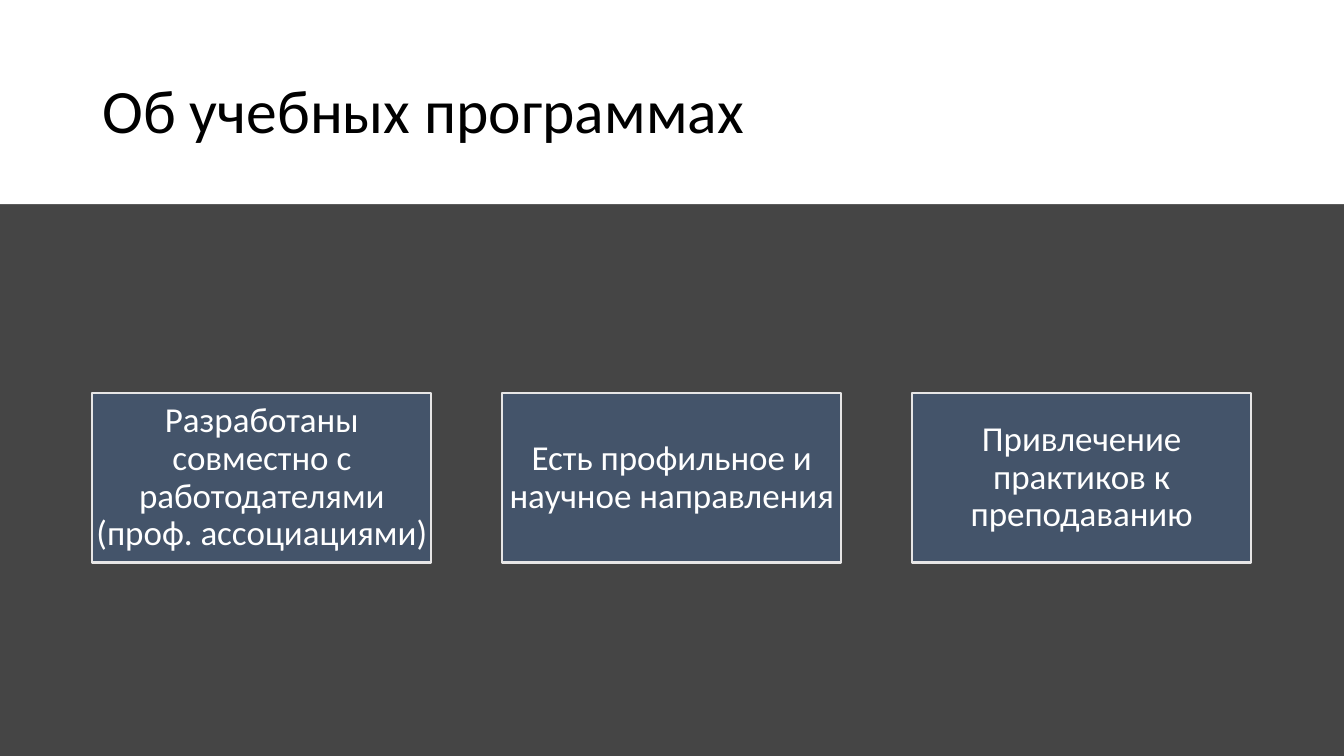
from dataclasses import dataclass

from pptx import Presentation
from pptx.dml.color import RGBColor
from pptx.enum.shapes import MSO_SHAPE
from pptx.enum.text import MSO_ANCHOR, MSO_AUTO_SIZE, PP_ALIGN
from pptx.shapes.autoshape import Shape
from pptx.slide import Slide
from pptx.util import Pt

COLOURS = {
    "background": "454545",
    "band": "FFFFFF",
    "title": "000000",
    "card": "44546A",
    "outline": "E7E6E6",
    "card_text": "FFFFFF",
}
FONT = "Calibri"
PAGE_WIDTH, PAGE_HEIGHT = 960, 540
CARD_LEFT, CARD_TOP, CARD_PITCH = 66, 280.8, 292.8
CARD_WIDTH, CARD_HEIGHT = 242, 121
CARD_TEXTS = (
    "Разработаны совместно с работодателями (проф. ассоциациями)",
    "Есть профильное и научное направления",
    "Привлечение практиков к преподаванию",
)


@dataclass(frozen=True)
class Frame:
    left: float
    top: float
    width: float
    height: float


@dataclass(frozen=True)
class TextStyle:
    size: float
    colour: str
    align: PP_ALIGN
    inset_x: float
    inset_y: float


TITLE_STYLE = TextStyle(44, "title", PP_ALIGN.LEFT, 7.2, 3.6)
CARD_STYLE = TextStyle(25, "card_text", PP_ALIGN.CENTER, 1.25, 1.25)


def colour(name: str) -> RGBColor:
    return RGBColor.from_string(COLOURS[name])


def add_rectangle(page: Slide, frame: Frame, fill: str) -> Shape:
    box = page.shapes.add_shape(
        MSO_SHAPE.RECTANGLE,
        Pt(frame.left), Pt(frame.top), Pt(frame.width), Pt(frame.height),
    )
    box.shadow.inherit = False
    box.fill.solid()
    box.fill.fore_color.rgb = colour(fill)
    box.line.fill.background()
    return box


def write_text(box: Shape, text: str, style: TextStyle) -> None:
    body = box.text_frame
    body.word_wrap = True
    body.auto_size = MSO_AUTO_SIZE.NONE
    body.vertical_anchor = MSO_ANCHOR.MIDDLE
    body.margin_left = body.margin_right = Pt(style.inset_x)
    body.margin_top = body.margin_bottom = Pt(style.inset_y)
    para = body.paragraphs[0]
    para.alignment = style.align
    para.line_spacing = 0.9
    span = para.add_run()
    span.text = text
    span.font.name = FONT
    span.font.size = Pt(style.size)
    span.font.color.rgb = colour(style.colour)


def add_title(page: Slide, text: str, frame: Frame) -> None:
    title = page.shapes.title
    title.left, title.top = Pt(frame.left), Pt(frame.top)
    title.width, title.height = Pt(frame.width), Pt(frame.height)
    write_text(title, text, TITLE_STYLE)
    page.shapes._spTree.append(title._element)


def add_card(page: Slide, index: int, text: str) -> None:
    left = CARD_LEFT + index * CARD_PITCH
    card = add_rectangle(page, Frame(left, CARD_TOP, CARD_WIDTH, CARD_HEIGHT), "card")
    card.line.color.rgb = colour("outline")
    card.line.width = Pt(1.5)
    write_text(card, text, CARD_STYLE)


def main() -> None:
    """Build the slide about study programmes and save it."""
    deck = Presentation()
    deck.slide_width, deck.slide_height = Pt(PAGE_WIDTH), Pt(PAGE_HEIGHT)
    page = deck.slides.add_slide(deck.slide_layouts[5])
    page.background.fill.solid()
    page.background.fill.fore_color.rgb = colour("background")
    add_rectangle(page, Frame(0, -0.5, PAGE_WIDTH, 146.3), "band")
    add_title(page, "Об учебных программах", Frame(66, 28.8, 828, 104.4))
    for index, text in enumerate(CARD_TEXTS):
        add_card(page, index, text)
    deck.save("out.pptx")


if __name__ == "__main__":
    main()
